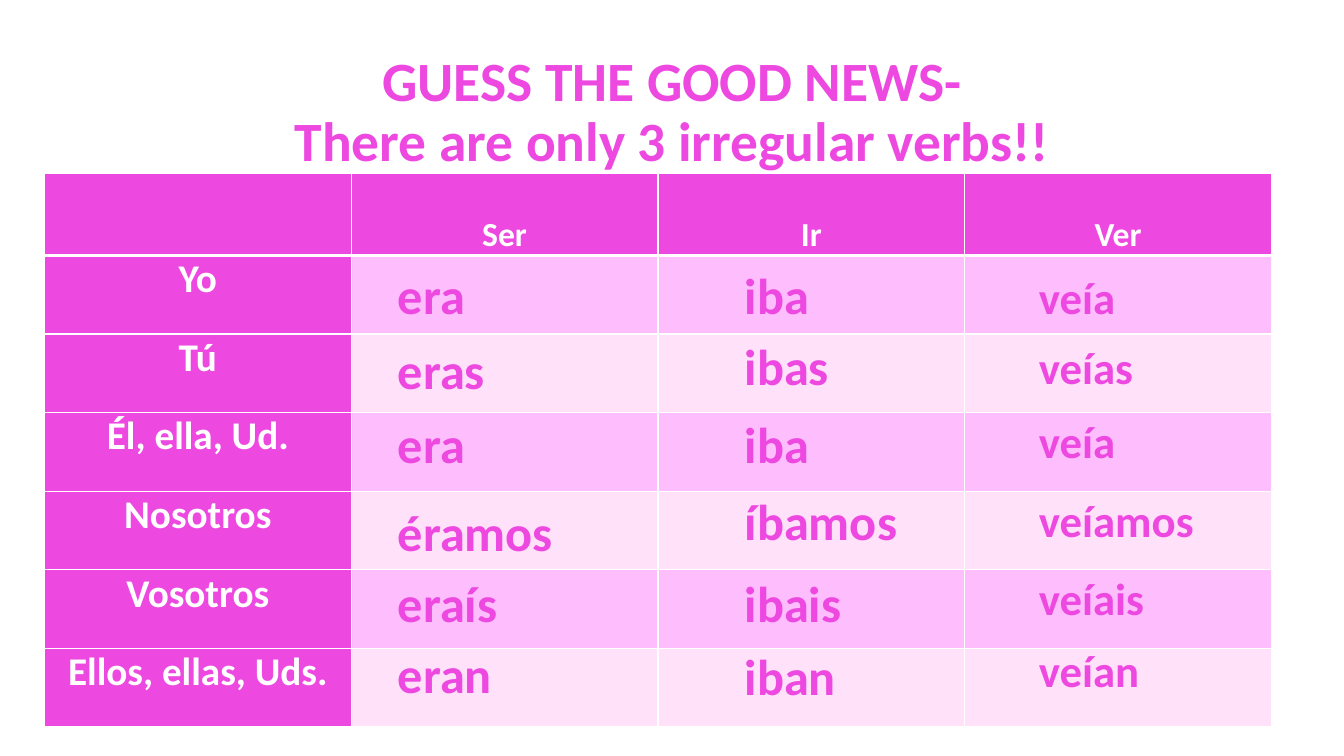
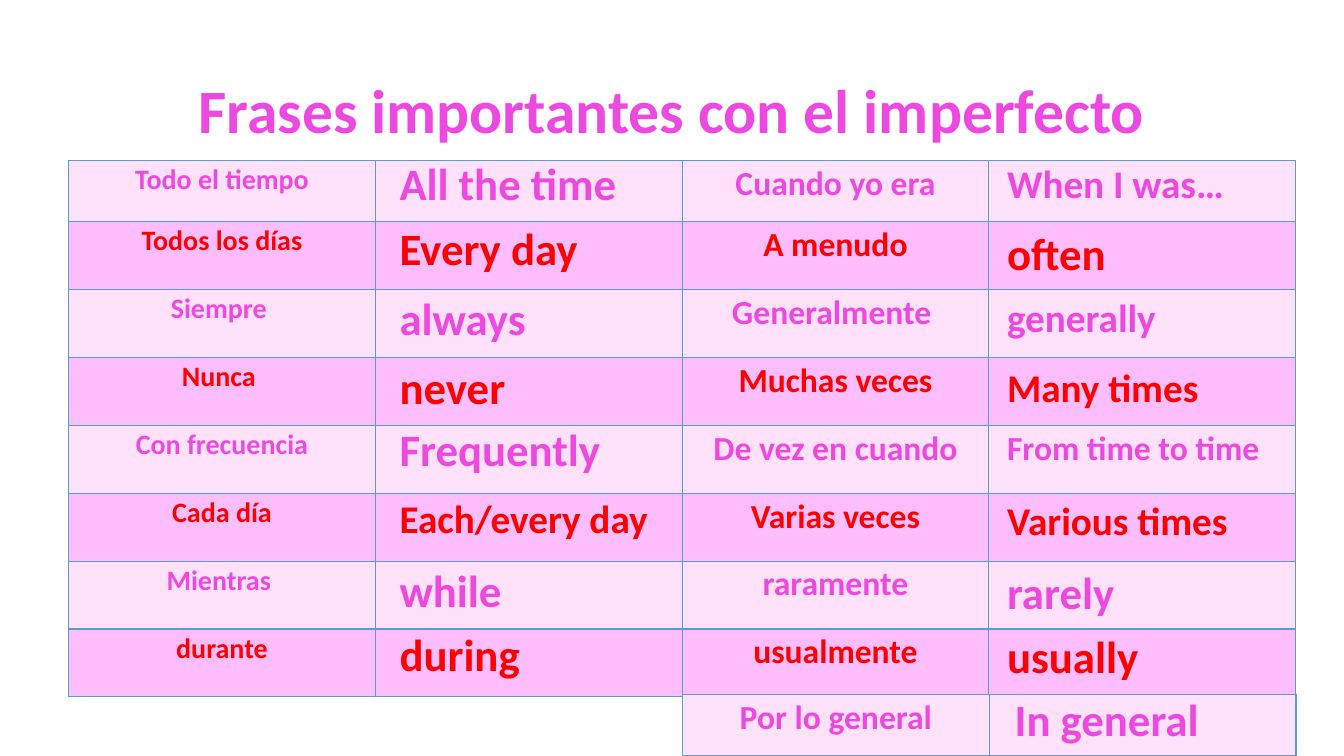
"""Build two slides on the Spanish imperfect: irregular verbs and key phrases."""
from dataclasses import dataclass, field
from typing import Any

from lxml import etree
from pptx import Presentation
from pptx import util as u
from pptx.dml.color import RGBColor
from pptx.enum import text
from pptx.oxml.ns import qn


@dataclass(frozen=True)
class Theme:
    """Colours, type sizes and shared formats."""
    pink: str = "ED49E1"
    red: str = "FF0000"
    white: str = "FFFFFF"
    blue: str = "5B9BD5"
    mid: str = "FEBEFE"
    pale: str = "FFE1F9"
    face: str = "Calibri"
    title: float = 44
    long: float = 39.6
    huge: float = 36
    big: float = 32
    large: float = 28
    base: float = 24
    small: float = 20


T = Theme()
CENTER = text.PP_ALIGN.CENTER
HEAD = {"alignment": CENTER, "line_spacing": 2.0}
PLAIN = {"alignment": CENTER, "line_spacing": 1.0}
PHRASE = {"alignment": CENTER, "line_spacing": 1.07, "space_after": u.Pt(8)}
TITLE = {"alignment": CENTER, "line_spacing": 0.9}
PLACE = {"left": u.Cm(2.33), "top": u.Cm(1.01), "width": u.Cm(29.21), "height": u.Cm(3.68)}
FRAME = {"word_wrap": True, "vertical_anchor": text.MSO_ANCHOR.MIDDLE,
         "auto_size": text.MSO_AUTO_SIZE.NONE}
INSET = {"margin_left": u.Cm(0.17), "margin_right": u.Cm(0.17),
         "margin_top": 0, "margin_bottom": 0}
COLUMN = 7.73


@dataclass(frozen=True)
class Cell:
    """One table cell."""
    fill: str
    words: str = ""
    size: float = T.base
    color: str = T.white
    style: dict[str, Any] = field(default_factory=dict)


@dataclass(frozen=True)
class Grid:
    """A table with its place, row heights and border."""
    left: float
    top: float
    rows: list[float]
    cells: list[list[Cell]]
    line: str
    rule: bool = False


@dataclass(frozen=True)
class Word:
    """An answer laid over a table."""
    words: str
    top: float
    size: float
    color: str = T.pink


@dataclass(frozen=True)
class Stack:
    """Answers that share a left edge."""
    left: float
    width: float
    words: list[Word]


def put(item: Any, form: dict[str, Any]) -> None:
    """Set each format value on an object."""
    for name, value in form.items():
        setattr(item, name, value)


def write(frame: Any, words: str, size: float, color: str, style: dict[str, Any]) -> None:
    """Write bold text in one paragraph."""
    frame.text = words
    para = frame.paragraphs[0]
    put(para, style)
    for run in para.runs:
        put(run.font, {"name": T.face, "size": u.Pt(size), "bold": True})
        run.font.color.rgb = RGBColor.from_string(color)


def edge(cell: Any, side: str, color: str, width: float) -> None:
    """Draw one side of a cell."""
    props = cell._tc.get_or_add_tcPr()
    line = etree.SubElement(props, qn(f"a:ln{side}"), w=str(int(u.Pt(width))))
    fill = etree.SubElement(line, qn("a:solidFill"))
    etree.SubElement(fill, qn("a:srgbClr"), val=color)


def draw_grid(slide: Any, grid: Grid) -> None:
    """Draw a table."""
    count = len(grid.cells[0])
    table = slide.shapes.add_table(
        len(grid.rows), count, u.Cm(grid.left), u.Cm(grid.top),
        u.Cm(COLUMN * count), u.Cm(sum(grid.rows))).table
    put(table, {"first_row": False, "horz_banding": False})
    for col in table.columns:
        col.width = u.Cm(COLUMN)
    for r, (height, line) in enumerate(zip(grid.rows, grid.cells)):
        table.rows[r].height = u.Cm(height)
        for c, part in enumerate(line):
            cell = table.cell(r, c)
            for side in "LRTB":
                thick = grid.rule and (r, side) in ((0, "B"), (1, "T"))
                edge(cell, side, grid.line, 3 if thick else 1)
            cell.fill.solid()
            cell.fill.fore_color.rgb = RGBColor.from_string(part.fill)
            put(cell, INSET)
            if part.words:
                write(cell.text_frame, part.words, part.size, part.color, part.style)


def draw_stack(slide: Any, stack: Stack) -> None:
    """Draw the answers of one column."""
    for word in stack.words:
        height = round(word.size * 0.043 + 0.25, 2)
        box = slide.shapes.add_textbox(
            u.Cm(stack.left), u.Cm(word.top), u.Cm(stack.width), u.Cm(height))
        put(box.text_frame, {"word_wrap": True,
                             "auto_size": text.MSO_AUTO_SIZE.SHAPE_TO_FIT_TEXT})
        write(box.text_frame, word.words, word.size, word.color, {})


def add_slide(deck: Any, title: str, size: float, grids: list[Grid],
              stacks: list[Stack]) -> None:
    """Add a titled slide with its tables and answers."""
    slide = deck.slides.add_slide(deck.slide_layouts[5])
    head = slide.shapes.title
    put(head, PLACE)
    put(head.text_frame, FRAME)
    write(head.text_frame, title, size, T.pink, TITLE)
    for grid in grids:
        draw_grid(slide, grid)
    for stack in stacks:
        draw_stack(slide, stack)


def add_verbs(deck: Any) -> None:
    """Add the slide of irregular verbs."""
    people = ["Yo", "Tú", "Él, ella, Ud.", "Nosotros", "Vosotros", "Ellos, ellas, Uds."]
    cells = [[Cell(T.pink, verb, style=HEAD) for verb in ("", "Ser", "Ir", "Ver")]]
    for i, who in enumerate(people):
        cells.append([Cell(T.pink, who, T.large, style=PLAIN)]
                     + [Cell(T.pale if i % 2 else T.mid)] * 3)
    forms = [
        (9.78, T.huge, [("era", 6.53), ("eras", 8.41), ("era", 10.29),
                        ("éramos", 12.5), ("eraís", 14.3), ("eran", 16.08)]),
        (18.52, T.huge, [("iba", 6.53), ("ibas", 8.33), ("iba", 10.29),
                         ("íbamos", 12.22), ("ibais", 14.3), ("iban", 16.13)]),
        (25.93, T.big, [("veía", 6.68), ("veías", 8.43), ("veía", 10.31),
                        ("veíamos", 12.29), ("veíais", 14.25), ("veían", 16.08)]),
    ]
    stacks = [Stack(left, 5.3, [Word(form, top, size) for form, top in words])
              for left, size, words in forms]
    grid = Grid(1.12, 4.37, [1.98] * 7, cells, T.white, True)
    add_slide(deck, "GUESS THE GOOD NEWS-\vThere are only 3 irregular verbs!!",
              T.long, [grid], stacks)


def add_phrases(deck: Any) -> None:
    """Add the slide of key phrases."""
    pairs = [("Todo el tiempo", "Cuando yo era"), ("Todos los días", "A menudo"),
             ("Siempre ", "Generalmente "), ("Nunca ", "Muchas veces"),
             ("Con frecuencia", "De vez en cuando"), ("Cada día", "Varias veces"),
             ("Mientras ", "raramente"), ("durante", "usualmente")]
    inks = [T.pink, T.red] * 4
    cells = []
    for i, (first, second) in enumerate(pairs):
        fill = T.mid if i % 2 else T.pale
        cells.append([Cell(fill, first, T.small, inks[i], PHRASE), Cell(fill),
                      Cell(fill, second, T.base, inks[i], PHRASE), Cell(fill)])
    last = [[Cell(T.pale, "Por lo general", T.base, T.pink, PHRASE), Cell(T.pale)]]
    left = [("All the time", 3.81, T.big), ("Every day", 5.44, T.big),
            ("always", 7.19, T.big), ("never", 8.94, T.big),
            ("Frequently", 10.49, T.big), ("Each/every day", 12.34, T.large),
            ("while", 14.05, T.big), ("during", 15.67, T.big)]
    right = [("When I was…", 3.89, T.large), ("often", 5.56, T.big),
             ("generally", 7.26, T.large), ("Many times", 9.02, T.large),
             ("From time to time", 10.64, T.base), ("Various times", 12.37, T.large),
             ("rarely", 14.1, T.big), ("usually", 15.72, T.big)]
    stacks = [Stack(x, width, [Word(*word, ink) for word, ink in zip(words, inks)])
              for x, width, words in ((9.82, 7.4, left), (25.13, 8.1, right))]
    stacks.append(Stack(25.32, 7.75, [Word("In general", 17.3, T.big)]))
    grids = [Grid(1.73, 4.04, [1.55] + [1.71] * 7, cells, T.blue),
             Grid(17.2, 17.5, [1.55], last, T.blue)]
    add_slide(deck, "Frases importantes con el imperfecto", T.title, grids, stacks)


def main() -> None:
    """Build and save the deck."""
    deck = Presentation()
    put(deck, {"slide_width": u.Cm(33.87), "slide_height": u.Cm(19.05)})
    add_verbs(deck)
    add_phrases(deck)
    deck.save("out.pptx")


if __name__ == "__main__":
    main()
